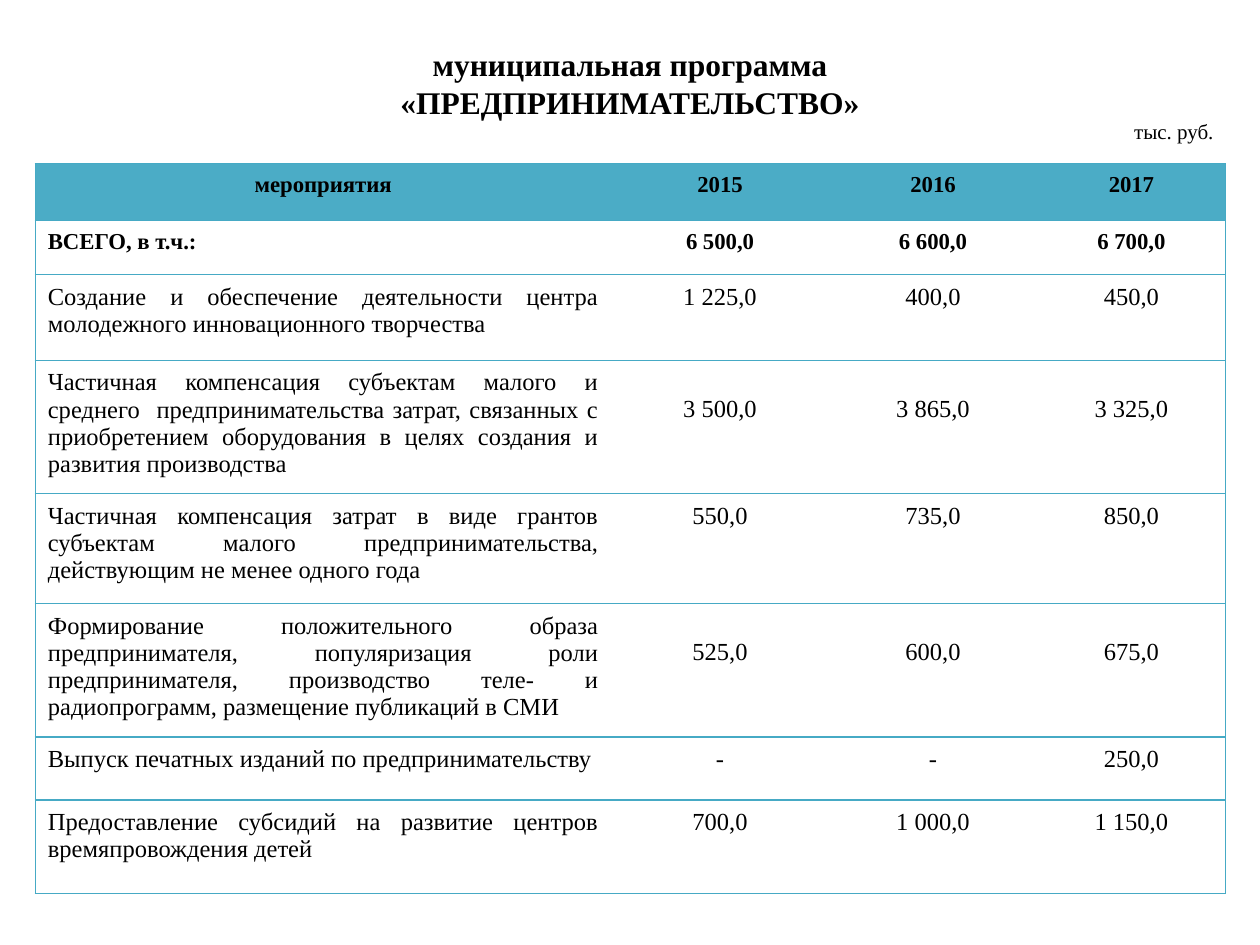
from lxml import etree
from pptx import Presentation
from pptx.dml.color import RGBColor
from pptx.enum import text
from pptx.oxml.ns import qn
from pptx.util import Inches, Pt

FONT = "Times New Roman"
BLACK, TEAL, RULE = "000000", "4BACC6", "46AAC5"
PLAIN_TABLE_STYLE = "{2D5ABB26-0587-4C30-8999-92F81FD0307C}"
COLUMN_WIDTHS = [4.57, 1.73, 1.65, 1.5]
LINE_HEIGHT = 0.21

# Row height, lines skipped above the figures, cell texts
ROWS = [
    (0.45, 0, ["мероприятия", "2015", "2016", "2017"]),
    (0.43, 0, ["ВСЕГО, в т.ч.:", "6 500,0", "6 600,0", "6 700,0"]),
    (0.68, 0, ["Создание и обеспечение деятельности центра молодежного "
               "инновационного творчества", "1 225,0", "400,0", "450,0"]),
    (1.06, 1, ["Частичная компенсация субъектам малого и среднего  "
               "предпринимательства затрат, связанных с приобретением "
               "оборудования в целях создания и развития производства ",
               "3 500,0", "3 865,0", "3 325,0"]),
    (0.87, 0, ["Частичная компенсация затрат в виде грантов субъектам малого "
               "предпринимательства, действующим не менее одного года",
               "550,0", "735,0", "850,0"]),
    (1.06, 1, ["Формирование положительного образа предпринимателя, "
               "популяризация роли предпринимателя, производство теле- и "
               "радиопрограмм, размещение публикаций в СМИ",
               "525,0", "600,0", "675,0"]),
    (0.5, 0, ["Выпуск печатных изданий по предпринимательству",
              "-", "-", "250,0"]),
    (0.74, 0, ["Предоставление субсидий на развитие центров "
               "времяпровождения детей", "700,0", "1 000,0", "1 150,0"]),
]


def color(value):
    return RGBColor.from_string(value)


def write(frame, content, size, align, bold=False):
    frame.text = content
    for para in frame.paragraphs:
        para.alignment = align
        for span in para.runs:
            span.font.name = FONT
            span.font.size = Pt(size)
            span.font.bold = bold
            span.font.color.rgb = color(BLACK)


def place(shape, left, top, width, height):
    shape.left, shape.top = Inches(left), Inches(top)
    shape.width, shape.height = Inches(width), Inches(height)


def add_title(page, left, top, width, height):
    title = page.shapes.title
    place(title, left, top, width, height)
    title.text_frame.vertical_anchor = text.MSO_ANCHOR.MIDDLE
    title.text_frame.auto_size = text.MSO_AUTO_SIZE.NONE
    write(title.text_frame, "муниципальная программа\v«ПРЕДПРИНИМАТЕЛЬСТВО»",
          18, text.PP_ALIGN.CENTER, bold=True)


def add_unit_note(page, left, top, width, height):
    box = page.shapes.add_textbox(*map(Inches, (left, top, width, height)))
    box.text_frame.word_wrap = True
    write(box.text_frame, "тыс. руб.", 12, text.PP_ALIGN.RIGHT)


def rule_cell(cell, sides):
    """Draw the given sides, named in schema order L, R, T, B."""
    properties = cell._tc.get_or_add_tcPr()
    for side in sides:
        line = etree.SubElement(properties, qn(f"a:ln{side}"), w=str(Pt(0.75)))
        fill = etree.SubElement(line, qn("a:solidFill"))
        etree.SubElement(fill, qn("a:srgbClr"), val=RULE)


def fill_cell(cell, content, row, column, skipped):
    sides = "L" if column == 0 else "R" if column == len(COLUMN_WIDTHS) - 1 else ""
    rule_cell(cell, sides + "TB")
    if row == 0:
        cell.fill.solid()
        cell.fill.fore_color.rgb = color(TEAL)
    else:
        cell.fill.background()
    cell.margin_left = cell.margin_right = Inches(0.1)
    cell.margin_top = cell.margin_bottom = Inches(0.07)
    if column > 0:
        cell.margin_top = Inches(0.07 + skipped * LINE_HEIGHT)
    justified = column == 0 and row > 0
    align = text.PP_ALIGN.JUSTIFY if justified else text.PP_ALIGN.CENTER
    emphasised = row < 2
    write(cell.text_frame, content, 13 if emphasised else 14, align, emphasised)


def add_budget_table(page, left, top, width, height):
    frame = page.shapes.add_table(len(ROWS), len(COLUMN_WIDTHS),
                                  *map(Inches, (left, top, width, height)))
    table = frame.table
    table.horz_banding = False
    table._tbl.tblPr.find(qn("a:tableStyleId")).text = PLAIN_TABLE_STYLE
    for column, column_width in zip(table.columns, COLUMN_WIDTHS):
        column.width = Inches(column_width)
    for row, (row_height, skipped, contents) in enumerate(ROWS):
        table.rows[row].height = Inches(row_height)
        for column, content in enumerate(contents):
            fill_cell(table.cell(row, column), content, row, column, skipped)


def main():
    deck = Presentation()
    deck.slide_width, deck.slide_height = Inches(10), Inches(7.5)
    page = deck.slides.add_slide(deck.slide_layouts[5])
    add_title(page, 0.5, 0.3, 9, 0.72)
    add_budget_table(page, 0.28, 1.3, 9.45, 5.8)
    add_unit_note(page, 8.23, 0.89, 1.5, 0.3)
    deck.save("out.pptx")


if __name__ == "__main__":
    main()
